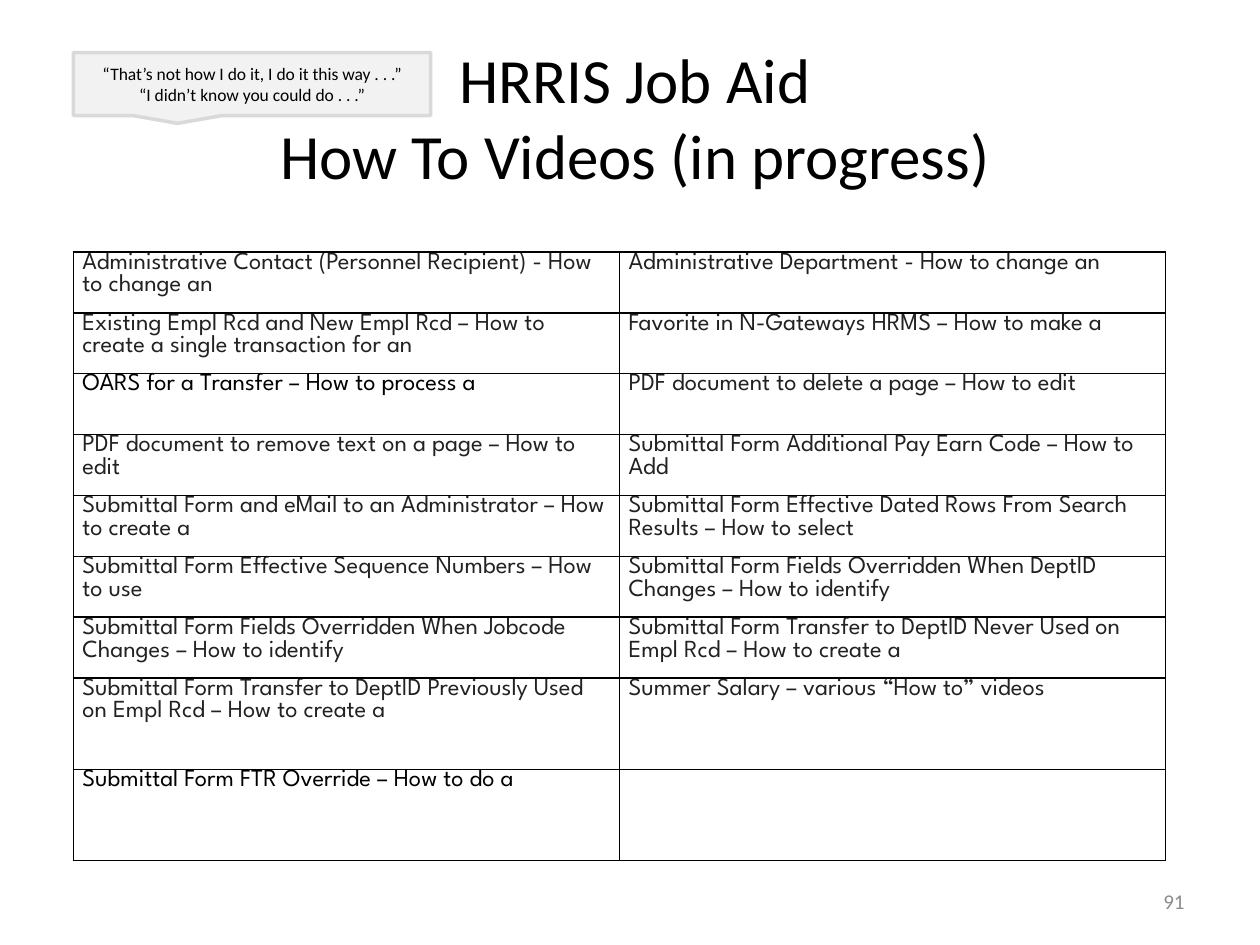
from lxml.etree import SubElement
from pptx import Presentation
from pptx.dml.color import RGBColor
from pptx.enum.shapes import MSO_SHAPE as Shape
from pptx.enum.text import MSO_ANCHOR as Anchor, PP_ALIGN as Align
from pptx.oxml.ns import qn
from pptx.util import Cm, Pt

BLACK = RGBColor(0x00, 0x00, 0x00)
INK = RGBColor(0x22, 0x22, 0x22)
GREY = RGBColor(0x8C, 0x8C, 0x8C)
PALE = RGBColor(0xF2, 0xF2, 0xF2)
EDGE = RGBColor(0xD9, 0xD9, 0xD9)
WHITE = RGBColor(0xFF, 0xFF, 0xFF)

TITLE = "HRRIS Job Aid\vHow To Videos (in progress)"
REMARKS = "“That’s not how I do it, I do it this way . . .”\n“I didn’t know you could do . . .”"
VIDEOS = [
    ("Administrative Contact (Personnel Recipient) - How to change an",
     "Administrative Department - How to change an"),
    ("Existing Empl Rcd and New Empl Rcd – How to create a single transaction for an",
     "Favorite in N-Gateways HRMS – How to make a"),
    ("OARS for a Transfer – How to process a",
     "PDF document to delete a page – How to edit"),
    ("PDF document to remove text on a page – How to edit",
     "Submittal Form Additional Pay Earn Code – How to Add"),
    ("Submittal Form and eMail to an Administrator – How to create a",
     "Submittal Form Effective Dated Rows From Search Results – How to select"),
    ("Submittal Form Effective Sequence Numbers – How to use",
     "Submittal Form Fields Overridden When DeptID Changes – How to identify"),
    ("Submittal Form Fields Overridden When Jobcode Changes – How to identify",
     "Submittal Form Transfer to DeptID Never Used on Empl Rcd – How to create a"),
    ("Submittal Form Transfer to DeptID Previously Used on Empl Rcd – How to create a",
     "Summer Salary – various “How to” videos"),
    ("Submittal Form FTR Override – How to do a", ""),
]
BLACK_VIDEOS = {VIDEOS[2][0], VIDEOS[8][0]}
TALL_ROWS = 2
TALL_RATIO = 1.5


def write(frame, text, size, color, align, font="Calibri"):
    """Fill a text frame with evenly styled paragraphs."""
    frame.word_wrap = True
    frame.text = text
    for paragraph in frame.paragraphs:
        paragraph.alignment = align
        paragraph.font.size = Pt(size)
        paragraph.font.name = font
        paragraph.font.color.rgb = color


def add_label(slide, left, top, width, height, text, size, color, align):
    """Place vertically centred text in the given box."""
    frame = slide.shapes.add_textbox(left, top, width, height).text_frame
    frame.vertical_anchor = Anchor.MIDDLE
    write(frame, text, size, color, align)


def add_remarks(slide, left, top, width, height):
    """Place the speech callout with the overheard remarks."""
    callout = slide.shapes.add_shape(
        Shape.RECTANGULAR_CALLOUT, left, top, width, height)
    callout.shadow.inherit = False
    callout.fill.solid()
    callout.fill.fore_color.rgb = PALE
    callout.line.color.rgb = EDGE
    callout.line.width = Pt(2)
    callout.text_frame.vertical_anchor = Anchor.MIDDLE
    write(callout.text_frame, REMARKS, 10, BLACK, Align.CENTER)


def add_borders(cell):
    """Draw a thin black line on every side of a cell."""
    properties = cell._tc.get_or_add_tcPr()
    for index, side in enumerate(("a:lnL", "a:lnR", "a:lnT", "a:lnB")):
        border = SubElement(properties, qn(side), w=str(Pt(1)))
        fill = SubElement(border, qn("a:solidFill"))
        SubElement(fill, qn("a:srgbClr"), val=str(BLACK))
        properties.insert(index, border)


def add_videos(slide, left, top, width, height):
    """Place the two-column table of videos, its last rows taller."""
    table = slide.shapes.add_table(
        len(VIDEOS), 2, left, top, width, height).table
    table.first_row = table.horz_banding = False
    short_rows = len(VIDEOS) - TALL_ROWS
    row_height = height / (short_rows + TALL_ROWS * TALL_RATIO)
    for index, titles in enumerate(VIDEOS):
        ratio = 1 if index < short_rows else TALL_RATIO
        table.rows[index].height = int(row_height * ratio)
        for cell, title in zip(table.rows[index].cells, titles):
            cell.margin_left = cell.margin_right = Cm(0.18)
            cell.margin_top = cell.margin_bottom = 0
            cell.fill.solid()
            cell.fill.fore_color.rgb = WHITE
            add_borders(cell)
            color = BLACK if title in BLACK_VIDEOS else INK
            write(cell.text_frame, title, 14, color, Align.LEFT, "League Spartan")


def main():
    """Build and save the slide."""
    deck = Presentation()
    deck.slide_width, deck.slide_height = Cm(25.4), Cm(19.05)
    slide = deck.slides.add_slide(deck.slide_layouts[6])
    add_label(slide, Cm(1.27), Cm(0.76), Cm(23.06), Cm(3.18),
              TITLE, 36, BLACK, Align.CENTER)
    add_label(slide, Cm(18.2), Cm(17.66), Cm(5.93), Cm(1.01),
              "91", 12, GREY, Align.RIGHT)
    add_remarks(slide, Cm(1.48), Cm(1.06), Cm(7.2), Cm(1.27))
    add_videos(slide, Cm(1.48), Cm(5.08), Cm(22.02), Cm(12.27))
    deck.save("out.pptx")


if __name__ == "__main__":
    main()
